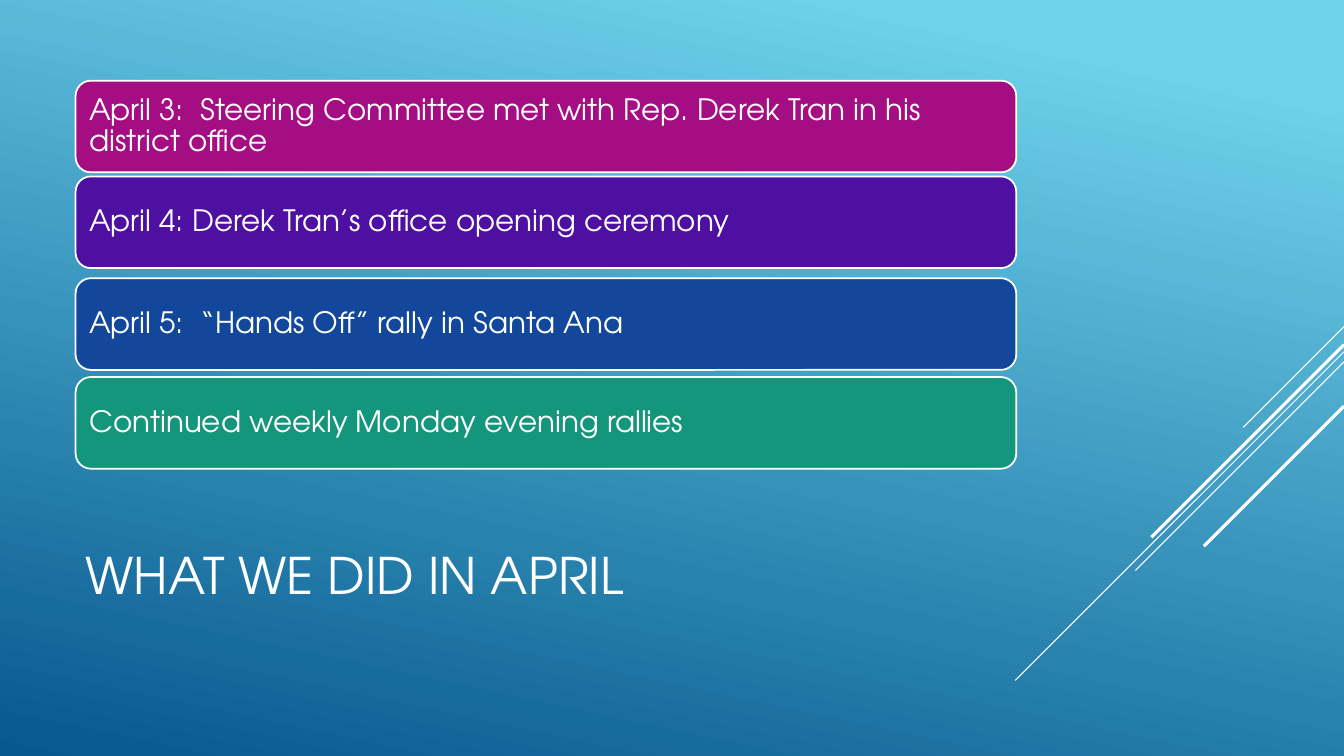
from pptx import Presentation
from pptx.dml.color import RGBColor
from pptx.enum.shapes import MSO_CONNECTOR as Connector, MSO_SHAPE as Shape
from pptx.enum.text import MSO_ANCHOR as Anchor, PP_ALIGN as Align
from pptx.oxml.ns import qn
from pptx.util import Inches, Pt

COLORS = {
    "white": "FFFFFF",
    "sky": "6ED2EB",
    "ocean": "06588E",
    "magenta": "A50E82",
    "violet": "4D10A0",
    "blue": "12479B",
    "green": "14967C",
}
WIDTH, HEIGHT = 13.33, 7.5
LEFT, COLUMN = 0.75, 9.33

EVENTS = [
    (0.8, "magenta", "April 3:  Steering Committee met with Rep. Derek Tran in his district office"),
    (1.75, "violet", "April 4: Derek Tran’s office opening ceremony"),
    (2.76, "blue", "April 5:  “Hands Off” rally in Santa Ana"),
    (3.74, "green", "Continued weekly Monday evening rallies"),
]
RAYS = [(3.24, 1.0, 0.75), (3.49, 3.26, 0.75), (3.59, 2.07, 0.75),
        (3.42, 1.91, 2.25), (4.03, 1.39, 2.25)]


class SlideBuilder:
    font = "TeX Gyre Adventor"

    def __init__(self, slide):
        self.slide = slide

    def color(self, name):
        return RGBColor.from_string(COLORS[name])

    def background(self, start, end, angle):
        fill = self.slide.background.fill
        fill.gradient()
        fill.gradient_angle = 360 - angle
        for stop, (position, name) in zip(fill.gradient_stops, (start, end)):
            stop.position = position
            stop.color.rgb = self.color(name)

    def label(self, frame, text, size, inset):
        frame.word_wrap = True
        frame.vertical_anchor = Anchor.MIDDLE
        frame.margin_left = frame.margin_right = Inches(inset)
        frame.margin_top = frame.margin_bottom = Inches(inset)
        paragraph = frame.paragraphs[0]
        paragraph.alignment = Align.LEFT
        paragraph.line_spacing = 0.9
        run = paragraph.add_run()
        run.text = text
        run.font.name = self.font
        run.font.size = Pt(size)
        run.font.color.rgb = self.color("white")

    def title(self, text, top, height):
        heading = self.slide.shapes.add_textbox(
            Inches(LEFT), Inches(top), Inches(COLUMN), Inches(height))
        self.label(heading.text_frame, text, 36, 0.1)

    def event(self, top, fill, text):
        bar = self.slide.shapes.add_shape(
            Shape.ROUNDED_RECTANGLE, Inches(LEFT), Inches(top), Inches(COLUMN), Inches(0.91))
        bar.shadow.inherit = False
        bar.fill.solid()
        bar.fill.fore_color.rgb = self.color(fill)
        bar.line.color.rgb = self.color("white")
        bar.line.width = Pt(1.25)
        self.label(bar.text_frame, text, 21, 0.09)

    def ray(self, top, reach, weight):
        ray = self.slide.shapes.add_connector(
            Connector.STRAIGHT, Inches(WIDTH), Inches(top),
            Inches(WIDTH - reach), Inches(top + reach))
        ray.line.color.rgb = self.color("white")
        ray.line.width = Pt(weight)
        properties = ray._element.spPr
        properties.append(properties.makeelement(qn("a:effectLst"), {}))


def main():
    deck = Presentation()
    deck.slide_width, deck.slide_height = Inches(WIDTH), Inches(HEIGHT)
    april = SlideBuilder(deck.slides.add_slide(deck.slide_layouts[6]))
    april.background((0.1, "sky"), (1.0, "ocean"), 102)
    for ray in RAYS:
        april.ray(*ray)
    april.title("WHAT WE DID IN APRIL", 4.91, 1.65)
    for event in EVENTS:
        april.event(*event)
    deck.save("out.pptx")


if __name__ == "__main__":
    main()
